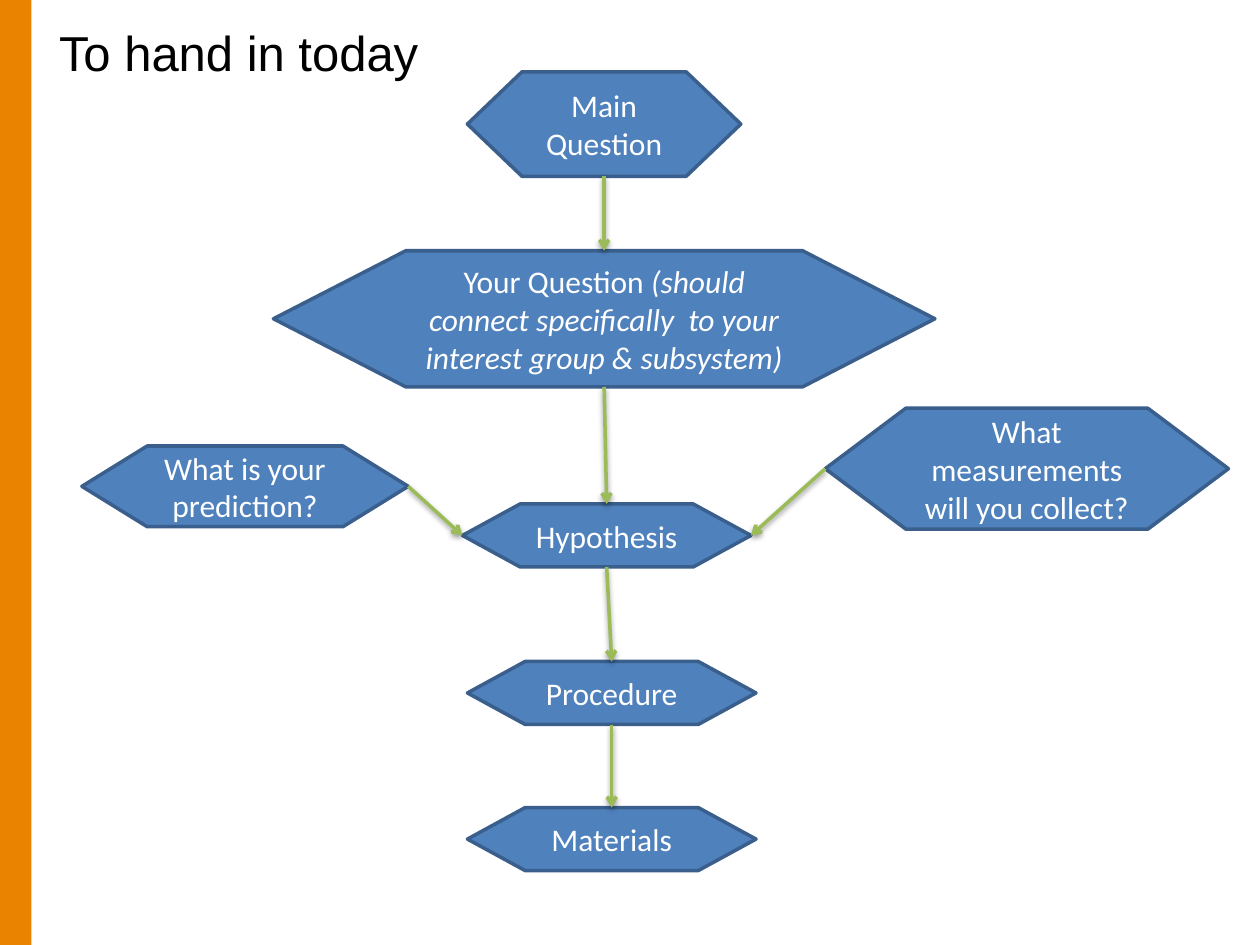
from lxml import etree
from pptx import Presentation
from pptx.dml.color import RGBColor
from pptx.enum import shapes, text
from pptx.oxml import parse_xml
from pptx.oxml.ns import nsdecls, qn
from pptx.util import Inches, Pt

ORANGE = RGBColor(0xE9, 0x83, 0x00)
BLUE = RGBColor(0x4F, 0x81, 0xBD)
DARK_BLUE = RGBColor(0x3A, 0x5F, 0x8C)
GREEN = RGBColor(0x9B, 0xBB, 0x59)
WHITE = RGBColor(0xFF, 0xFF, 0xFF)
BLACK = RGBColor(0, 0, 0)

TITLE = "To hand in today"

# step: (left, top, width, height), plain text, italic text
STEPS = {
    "your question": ((2.17, 1.99, 5.25, 1.08), "Your Question ",
                      "(should connect specifically  to your interest group & subsystem)"),
    "main question": ((3.71, 0.57, 2.17, 0.83), "Main Question", ""),
    "hypothesis": ((3.67, 4, 2.29, 0.5), "Hypothesis", ""),
    "prediction": ((0.65, 3.54, 2.59, 0.64), "What is your prediction?", ""),
    "measurements": ((6.55, 3.24, 3.2, 0.96), "What measurements will you collect?", ""),
    "procedure": ((3.71, 5.25, 2.29, 0.5), "Procedure", ""),
    "materials": ((3.71, 6.41, 2.29, 0.5), "Materials", ""),
}

# Connection sites of a hexagon
TOP, LEFT, BOTTOM, RIGHT = range(4)
ARROWS = [
    ("main question", BOTTOM, "your question", TOP),
    ("your question", BOTTOM, "hypothesis", TOP),
    ("prediction", RIGHT, "hypothesis", LEFT),
    ("measurements", LEFT, "hypothesis", RIGHT),
    ("hypothesis", BOTTOM, "procedure", TOP),
    ("procedure", BOTTOM, "materials", TOP),
]

ARROW_SHADOW = (
    f'<a:effectLst {nsdecls("a")}>'
    f'<a:outerShdw blurRad="{Pt(3.1)}" dist="{Pt(1.6)}" dir="5400000" rotWithShape="0">'
    '<a:srgbClr val="000000"><a:alpha val="38000"/></a:srgbClr>'
    '</a:outerShdw></a:effectLst>'
)


def add_run(paragraph, words, size=18, font="Calibri", color=WHITE, italic=False):
    run = paragraph.add_run()
    run.text = words
    run.font.size = Pt(size)
    run.font.name = font
    run.font.color.rgb = color
    run.font.italic = italic


def add_filled(slide, kind, box, fill, outline=None):
    shape = slide.shapes.add_shape(kind, *map(Inches, box))
    shape.shadow.inherit = False
    shape.fill.solid()
    shape.fill.fore_color.rgb = fill
    if outline is None:
        shape.line.fill.background()
    else:
        shape.line.color.rgb = outline
        shape.line.width = Pt(2)
    return shape


def add_step(slide, box, plain, italic):
    hexagon = add_filled(slide, shapes.MSO_SHAPE.FLOWCHART_PREPARATION, box, BLUE, DARK_BLUE)
    frame = hexagon.text_frame
    frame.word_wrap = True
    frame.vertical_anchor = text.MSO_ANCHOR.MIDDLE
    paragraph = frame.paragraphs[0]
    paragraph.alignment = text.PP_ALIGN.CENTER
    add_run(paragraph, plain)
    if italic:
        add_run(paragraph, italic, italic=True)
    return hexagon


def add_arrow(slide, start, start_site, end, end_site):
    arrow = slide.shapes.add_connector(shapes.MSO_CONNECTOR.STRAIGHT, 0, 0, 0, 0)
    arrow.begin_connect(start, start_site)
    arrow.end_connect(end, end_site)
    arrow.line.color.rgb = GREEN
    arrow.line.width = Pt(2)
    etree.SubElement(arrow.line._get_or_add_ln(), qn("a:tailEnd"), type="arrow")
    arrow._element.spPr.append(parse_xml(ARROW_SHADOW))


def add_title(slide):
    title = slide.shapes.add_textbox(*map(Inches, (0.37, 0.13, 3.09, 0.57)))
    frame = title.text_frame
    frame.word_wrap = False
    frame.auto_size = text.MSO_AUTO_SIZE.SHAPE_TO_FIT_TEXT
    add_run(frame.paragraphs[0], TITLE, size=28, font="Arial", color=BLACK)


def main():
    deck = Presentation()
    deck.slide_width, deck.slide_height = Inches(10), Inches(7.5)
    slide = deck.slides.add_slide(deck.slide_layouts[6])
    add_filled(slide, shapes.MSO_SHAPE.RECTANGLE, (0, 0, 0.25, 7.5), ORANGE)
    steps = {name: add_step(slide, *step) for name, step in STEPS.items()}
    for start, start_site, end, end_site in ARROWS:
        add_arrow(slide, steps[start], start_site, steps[end], end_site)
    add_title(slide)
    deck.save("out.pptx")


if __name__ == "__main__":
    main()
